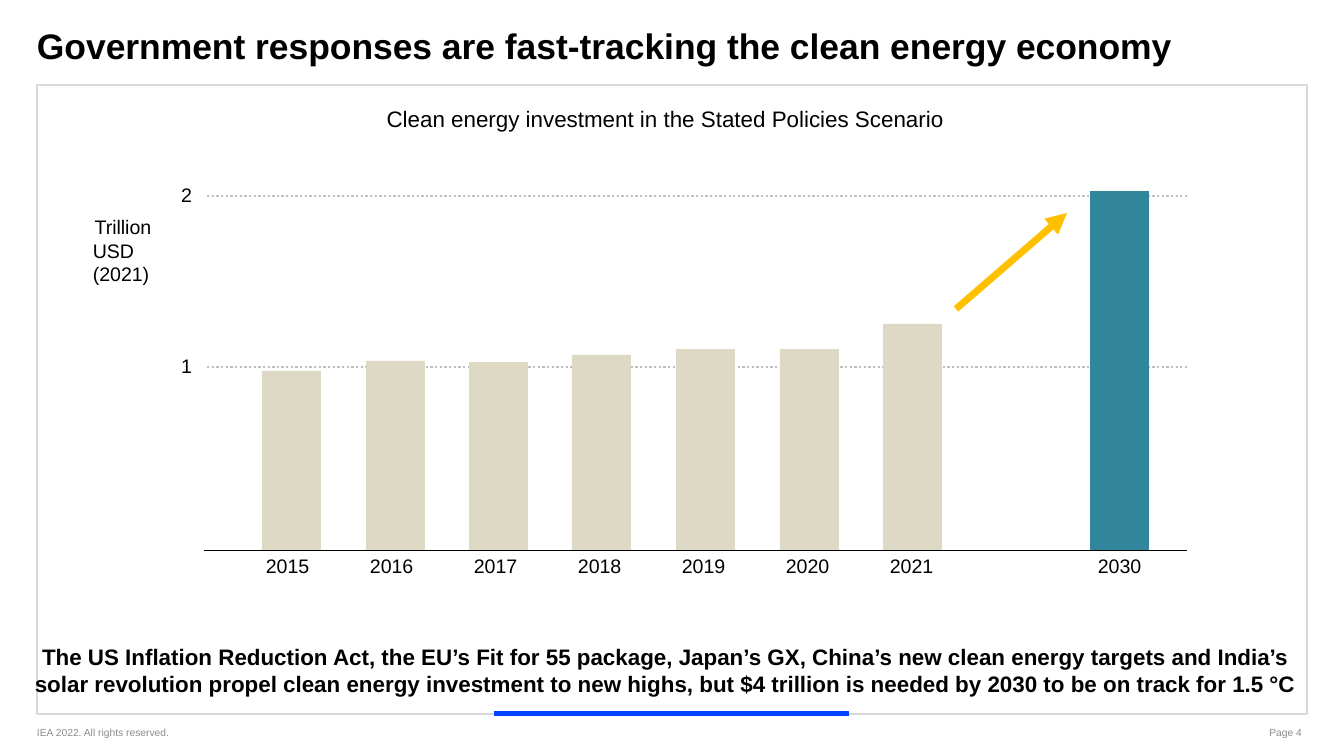
from lxml.etree import SubElement
from pptx import Presentation
from pptx.dml.color import RGBColor
from pptx.enum.dml import MSO_LINE
from pptx.enum.shapes import MSO_CONNECTOR, MSO_SHAPE
from pptx.enum.text import MSO_ANCHOR, MSO_AUTO_SIZE, PP_ALIGN
from pptx.oxml.ns import qn
from pptx.util import Pt

BLACK = RGBColor(0x00, 0x00, 0x00)
GREY = RGBColor(0x8C, 0x8C, 0x8C)
FRAME = RGBColor(0xD9, 0xD9, 0xD9)
GRID = RGBColor(0xBF, 0xBF, 0xBF)
BLUE = RGBColor(0x00, 0x44, 0xFF)
SAND = RGBColor(0xDD, 0xD9, 0xC4)
TEAL = RGBColor(0x31, 0x86, 0x9B)
AMBER = RGBColor(0xFF, 0xC0, 0x00)

FONT = "Arial"
PX_PER_INCH = 134.4

# Year, slot on the axis, bar height in px, colour
BARS = [
    ("2015", 0, 179, SAND),
    ("2016", 1, 189, SAND),
    ("2017", 2, 188, SAND),
    ("2018", 3, 195, SAND),
    ("2019", 4, 201, SAND),
    ("2020", 5, 201, SAND),
    ("2021", 6, 226, SAND),
    ("2030", 8, 359, TEAL),
]


def px(n):
    return round(n * 914400 / PX_PER_INCH)


def fill_text(sp, lines, size, color=BLACK, bold=False, align=PP_ALIGN.LEFT,
              anchor=MSO_ANCHOR.TOP, insets=(0, 0, 0, 0), wrap=True):
    tf = sp.text_frame
    tf.word_wrap = wrap
    tf.auto_size = MSO_AUTO_SIZE.NONE
    tf.vertical_anchor = anchor
    tf.margin_left, tf.margin_top, tf.margin_right, tf.margin_bottom = map(px, insets)
    for i, line in enumerate(lines):
        p = tf.add_paragraph() if i else tf.paragraphs[0]
        p.text = line
        p.alignment = align
        p.font.name = FONT
        p.font.size = Pt(size)
        p.font.bold = bold
        p.font.color.rgb = color
    return tf


def add_text(s, box, lines, size, **style):
    return fill_text(s.shapes.add_textbox(*map(px, box)), lines, size, **style)


def add_rect(s, box, fill=None, line=None, width=0.75):
    sp = s.shapes.add_shape(MSO_SHAPE.RECTANGLE, *map(px, box))
    sp.shadow.inherit = False
    if fill is None:
        sp.fill.background()
    else:
        sp.fill.solid()
        sp.fill.fore_color.rgb = fill
    if line is None:
        sp.line.fill.background()
    else:
        sp.line.color.rgb = line
        sp.line.width = Pt(width)


def add_line(s, ends, color, width, dash=None, arrow=False):
    sp = s.shapes.add_connector(MSO_CONNECTOR.STRAIGHT, *map(px, ends))
    sp.line.color.rgb = color
    sp.line.width = Pt(width)
    if dash is not None:
        sp.line.dash_style = dash
    if arrow:
        SubElement(sp.line._get_or_add_ln(), qn("a:tailEnd"), type="triangle")
    SubElement(sp._element.spPr, qn("a:effectLst"))


def add_footer(s, box):
    x, y, w, h = box
    style = dict(color=GREY, anchor=MSO_ANCHOR.MIDDLE, insets=(0, 7, 13, 7))
    add_text(s, (x, y, 179, h), ["IEA 2022. All rights reserved."], 5.5, **style)
    add_text(s, (x + w - 179, y, 179, h), ["Page 4"], 5.5, align=PP_ALIGN.RIGHT, **style)


def add_panel(s, box):
    x, y, w, h = box
    # Frame with an accent bar on its lower edge
    add_rect(s, box, line=FRAME)
    add_rect(s, (x + 457, y + h - 2, 355, 4), BLUE, BLUE, 0.5)
    # Chart heading and closing message
    add_text(s, (x, y + 13, w, 42),
             ["Clean energy investment in the Stated Policies Scenario"], 12,
             align=PP_ALIGN.CENTER, insets=(0, 7, 13, 7))
    add_text(s, (x - 9, y + 559, w + 19, 64),
             ["The US Inflation Reduction Act, the EU’s Fit for 55 package, "
              "Japan’s GX, China’s new clean energy targets and India’s solar "
              "revolution propel clean energy investment to new highs, but "
              "$4 trillion is needed by 2030 to be on track for 1.5 °C"], 12,
             bold=True, align=PP_ALIGN.CENTER, anchor=MSO_ANCHOR.MIDDLE,
             insets=(0, 0, 13, 11))


def add_bars(s, box):
    x, y, w, h = box
    # Gridlines and value labels
    for label, offset in (("1", 176), ("2", 5)):
        level = y + offset
        add_line(s, (x + 3, level, x + w, level), GRID, 1.25, MSO_LINE.ROUND_DOT)
        add_text(s, (x - 28, level - 13, 16, 24), [label], 10.5,
                 align=PP_ALIGN.RIGHT, wrap=False)
    # Unit
    tf = add_text(s, (x - 111, y + 15, 60, 81), ["Trillion", "USD\n(2021)"], 10.5,
                  insets=(0, 9, 0, 0), wrap=False)
    tf.paragraphs[0].alignment = PP_ALIGN.CENTER
    # Bars and years
    for year, slot, height, color in BARS:
        add_rect(s, (x + 58 + round(103.5 * slot), y + h - height, 59, height), color)
        add_text(s, (x + 62 + 104 * slot, y + h + 4, 44, 24), [year], 10.5, wrap=False)
    # Growth arrow and base line
    add_line(s, (x + 752, y + 118, x + 863, y + 22), AMBER, 3.75, arrow=True)
    add_line(s, (x, y + h, x + w, y + h), BLACK, 0.38)


def add_title(s, box):
    sp = s.shapes.title
    sp.left, sp.top, sp.width, sp.height = map(px, box)
    fill_text(sp, ["Government responses are fast-tracking the clean energy economy"],
              19, bold=True)


def main():
    prs = Presentation()
    prs.slide_width, prs.slide_height = px(1344), px(756)
    s = prs.slides.add_slide(prs.slide_layouts[5])
    add_title(s, (37, 24, 1175, 58))
    add_panel(s, (37, 85, 1270, 629))
    add_bars(s, (204, 191, 983, 359))
    add_footer(s, (37, 719, 1278, 27))
    prs.save("out.pptx")


if __name__ == "__main__":
    main()
